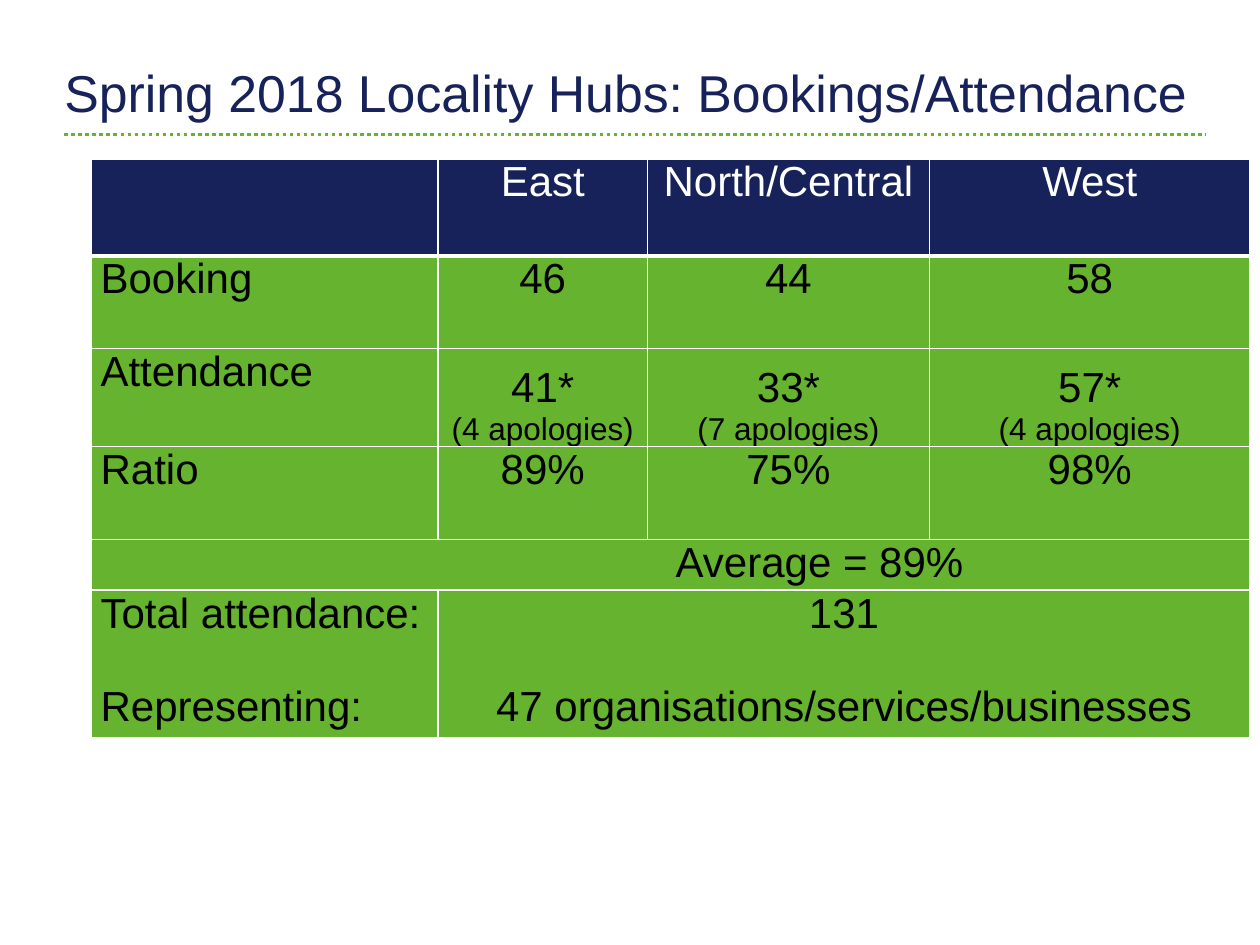
from dataclasses import dataclass
from lxml.etree import SubElement as Sub
from pptx import Presentation
from pptx.dml.color import RGBColor as RGB
from pptx.enum.dml import MSO_LINE as Dash
from pptx.enum.shapes import MSO_CONNECTOR as Conn
from pptx.enum.text import MSO_ANCHOR as Anchor, PP_ALIGN as Align
from pptx.oxml.ns import qn
from pptx.util import Pt


@dataclass(frozen=True)
class Theme:
    font: str = "Arial"
    navy: str = "162259"
    green: str = "65B32E"
    white: str = "FFFFFF"
    black: str = "000000"
    title: float = 29.6
    body: float = 24
    note: float = 18
    gap: float = 26.8
    inset: float = 5.1
    thin: float = 1
    thick: float = 3


T = Theme()
COLS = [198, 119.5, 161.3, 141.8]
ROWS = [55.4, 53.1, 56, 53.1, 28, 80.4]
HEAD = ["", "East", "North/Central", "West"]
BOOK = ["Booking", "46", "44", "58"]
CAME = ["Attendance", "41*", "33*", "57*"]
SORRY = ["(4 apologies)", "(7 apologies)", "(4 apologies)"]
RATIO = ["Ratio", "89%", "75%", "98%"]


def add_text(frame, lines, color, align, gap=0):
    for i, (text, size) in enumerate(lines):
        para = frame.paragraphs[0] if i == 0 else frame.add_paragraph()
        para.alignment = align
        if i:
            para.space_before = Pt(gap)
        run = para.add_run()
        run.text = text
        font = run.font
        font.name, font.size, font.bold = T.font, Pt(size), False
        font.color.rgb = RGB.from_string(color)


def add_title(slide, text):
    box = slide.shapes.add_textbox(Pt(8.6), Pt(28.8), Pt(699), Pt(65.5))
    frame = box.text_frame
    frame.word_wrap = True
    frame.margin_top = Pt(6)
    add_text(frame, [(text, T.title)], T.navy, Align.CENTER)


def add_rule(slide):
    rule = slide.shapes.add_connector(
        Conn.STRAIGHT, Pt(36.7), Pt(77), Pt(689), Pt(77))
    rule.line.color.rgb = RGB.from_string(T.green)
    rule.line.width = Pt(2)
    rule.line.dash_style = Dash.ROUND_DOT
    Sub(rule._element.spPr, qn("a:effectLst"))


def add_edge(cell, side, width):
    props = cell._tc.get_or_add_tcPr()
    edge = Sub(props, qn("a:ln" + side), w=str(Pt(width)))
    fill = Sub(edge, qn("a:solidFill"))
    Sub(fill, qn("a:srgbClr"), val=T.white)


def style_cell(cell, row):
    for side in "LRTB":
        heavy = (row, side) in [(0, "B"), (1, "T")]
        add_edge(cell, side, T.thick if heavy else T.thin)
    cell.fill.solid()
    cell.fill.fore_color.rgb = RGB.from_string(T.green if row else T.navy)
    cell.margin_left = cell.margin_right = Pt(T.inset)
    cell.margin_top = cell.margin_bottom = 0


def add_grid(slide):
    shape = slide.shapes.add_table(
        len(ROWS), len(COLS), Pt(52.4), Pt(90.8), Pt(sum(COLS)), Pt(sum(ROWS)))
    grid = shape.table
    grid.first_row = grid.horz_banding = False
    for col, width in zip(grid.columns, COLS):
        col.width = Pt(width)
    for row, height in zip(grid.rows, ROWS):
        row.height = Pt(height)
    for r in range(len(ROWS)):
        for c in range(len(COLS)):
            style_cell(grid.cell(r, c), r)
    return grid


def fill_rows(grid):
    for r, row in enumerate([HEAD, BOOK, CAME, RATIO]):
        for c, text in enumerate(row):
            if not text:
                continue
            cell = grid.cell(r, c)
            lines = [(text, T.body)]
            if row is CAME and c:
                lines.append((SORRY[c - 1], T.note))
                cell.vertical_anchor = Anchor.BOTTOM
            add_text(cell.text_frame, lines, T.black if r else T.white,
                     Align.CENTER if c else Align.LEFT)


def fill_sums(grid):
    mean = grid.cell(4, 0)
    mean.merge(grid.cell(4, 3))
    mean.margin_left = Pt(T.inset + 170)
    add_text(mean.text_frame, [("Average = 89%", T.body)],
             T.black, Align.CENTER)
    total = grid.cell(5, 1)
    total.merge(grid.cell(5, 3))
    names = ["Total attendance:", "Representing:"]
    sums = ["131", "47 organisations/services/businesses"]
    for cell, texts, align in [(grid.cell(5, 0), names, Align.LEFT),
                               (total, sums, Align.CENTER)]:
        add_text(cell.text_frame, [(text, T.body) for text in texts],
                 T.black, align, T.gap)


def main():
    deck = Presentation()
    deck.slide_width, deck.slide_height = Pt(720), Pt(540)
    slide = deck.slides.add_slide(deck.slide_layouts[6])
    add_title(slide, "Spring 2018 Locality Hubs: Bookings/Attendance")
    grid = add_grid(slide)
    fill_rows(grid)
    fill_sums(grid)
    add_rule(slide)
    deck.save("out.pptx")


if __name__ == "__main__":
    main()
